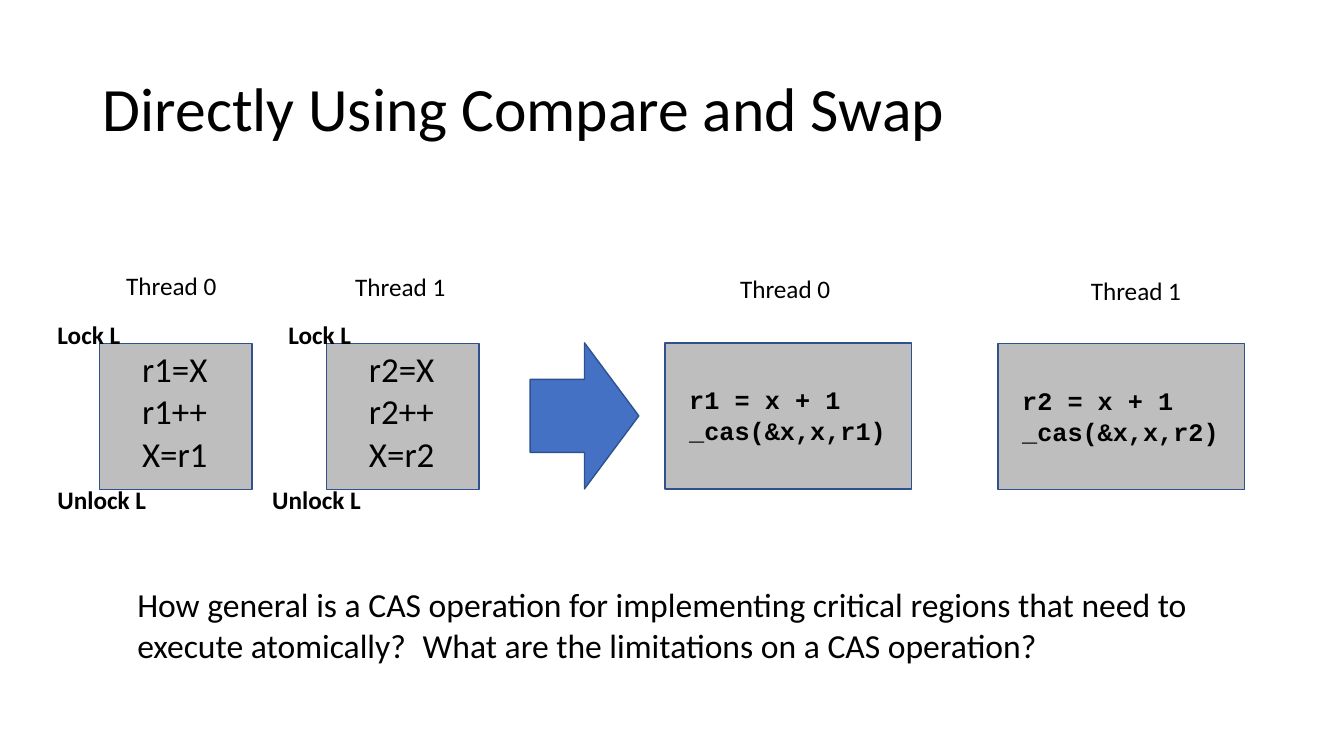
from lxml.etree import SubElement
from pptx import Presentation
from pptx.dml.color import RGBColor
from pptx.enum.shapes import MSO_SHAPE as Preset
from pptx.enum.text import MSO_ANCHOR as Anchor, PP_ALIGN as Align
from pptx.oxml.ns import qn
from pptx.util import Cm, Pt

COLORS = {"text": "000000", "box": "BEBEBE", "arrow": "4471C4", "outline": "2E528F"}

TITLE = "Directly Using Compare and Swap"
QUESTION = (
    "How general is a CAS operation for implementing critical regions that need to "
    "execute atomically?\tWhat are the limitations on a CAS operation?"
)
QUESTION_TAB = 7.19

# Left and top of each label, in cm
THREAD_LABELS = [
    ("Thread 0", 3.18, 6.76),
    ("Thread 1", 8.95, 6.78),
    ("Thread 0", 18.65, 6.83),
    ("Thread 1", 27.49, 6.88),
]
LOCK_LABELS = [
    ("Lock L", 1.45, 7.98),
    ("Unlock L", 1.45, 12.14),
    ("Lock L", 7.27, 7.98),
    ("Unlock L", 6.86, 12.14),
]

# Lines of code, left and top of each box, in cm
LOCKED_CODE = [
    (["r1=X", "r1++", "X=r1"], 2.51, 8.66),
    (["r2=X", "r2++", "X=r2"], 8.23, 8.66),
]
CAS_CODE = [
    (["r1 = x + 1", "_cas(&x,x,r1)"], 16.76, 8.64),
    (["r2 = x + 1", "_cas(&x,x,r2)"], 25.15, 8.66),
]
LOCKED_WIDTH, CAS_WIDTH, BOX_HEIGHT = 3.84, 6.22, 3.68


def color(name):
    return RGBColor.from_string(COLORS[name])


def write(shape, lines, size=18, font="Calibri", bold=False, left=0, top=0.06,
          wrap=True, spacing=1.0, before=0):
    """Fill a shape with one paragraph per line; left and top are insets in cm."""
    frame = shape.text_frame
    frame.word_wrap = wrap
    frame.vertical_anchor = Anchor.TOP
    frame.margin_left, frame.margin_top = Cm(left), Cm(top)
    frame.margin_right = frame.margin_bottom = 0
    for index, line in enumerate(lines):
        paragraph = frame.add_paragraph() if index else frame.paragraphs[0]
        paragraph.alignment = Align.LEFT
        paragraph.line_spacing = spacing
        paragraph.space_before = Pt(before if index else 0)
        run = paragraph.add_run()
        run.text = line
        run.font.size, run.font.name, run.font.bold = Pt(size), font, bold
        run.font.color.rgb = color("text")


def add_text(slide, lines, left, top, width, height, **style):
    box = slide.shapes.add_textbox(Cm(left), Cm(top), Cm(width), Cm(height))
    write(box, lines, **style)
    return box


def add_preset(slide, preset, fill, left, top, width):
    shape = slide.shapes.add_shape(preset, Cm(left), Cm(top), Cm(width), Cm(BOX_HEIGHT))
    shape.shadow.inherit = False
    shape.fill.solid()
    shape.fill.fore_color.rgb = color(fill)
    shape.line.color.rgb = color("outline")
    shape.line.width = Pt(1)
    return shape


def set_tab_stop(paragraph, position):
    stops = SubElement(paragraph._p.get_or_add_pPr(), qn("a:tabLst"))
    SubElement(stops, qn("a:tab"), pos=str(Cm(position)), algn="l")


def main():
    presentation = Presentation()
    presentation.slide_width, presentation.slide_height = Cm(33.87), Cm(19.05)
    slide = presentation.slides.add_slide(presentation.slide_layouts[5])

    title = slide.shapes.title
    title.left, title.top, title.width, title.height = Cm(0.41), Cm(0.28), Cm(33.07), Cm(4.27)
    write(title, [TITLE], size=44, left=2.18, top=1.49)

    for lines, left, top in LOCKED_CODE:
        box = add_preset(slide, Preset.RECTANGLE, "box", left, top, LOCKED_WIDTH)
        write(box, lines, size=25, left=1.07, top=0.09, spacing=1.01)
    for lines, left, top in CAS_CODE:
        box = add_preset(slide, Preset.RECTANGLE, "box", left, top, CAS_WIDTH)
        write(box, lines, font="Courier New", bold=True, left=0.61, top=1.04, before=1)
    add_preset(slide, Preset.RIGHT_ARROW, "arrow", 13.36, 8.64, 2.74)

    for labels, bold in ((THREAD_LABELS, False), (LOCK_LABELS, True)):
        for label, left, top in labels:
            add_text(slide, [label], left, top, 2.36, 0.84, bold=bold, wrap=False)

    question = add_text(slide, [QUESTION], 3.46, 14.66, 26.9, 2.11, size=24)
    set_tab_stop(question.text_frame.paragraphs[0], QUESTION_TAB)

    presentation.save("out.pptx")


if __name__ == "__main__":
    main()
